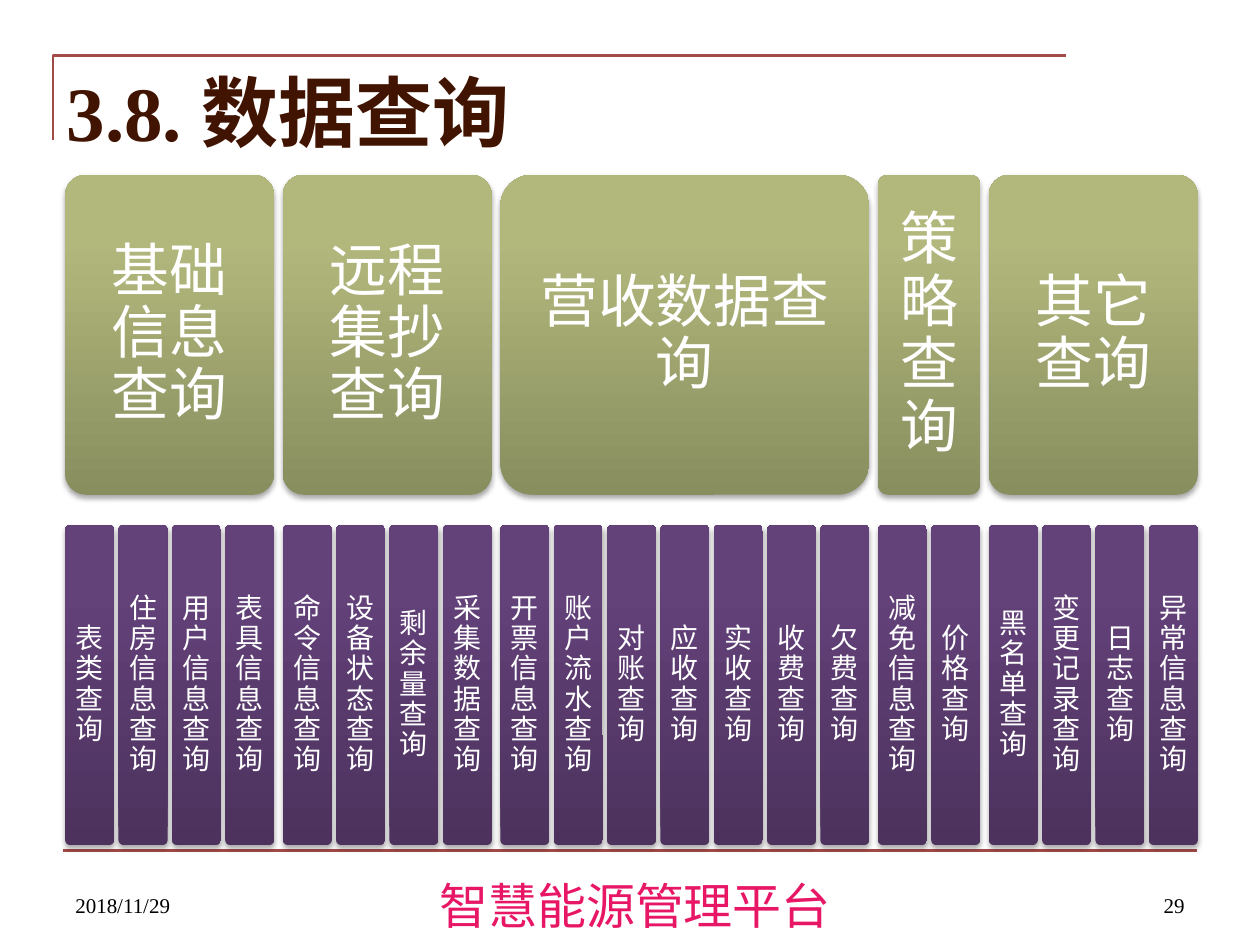
"""Build the data query slide on a grid of 100 columns by 75 rows."""
import dataclasses

import lxml.etree
import pptx
import pptx.dml.color
import pptx.enum.shapes
import pptx.enum.text
import pptx.oxml
import pptx.oxml.ns
import pptx.util

COLUMNS, ROWS = 100, 75
CELL = pptx.util.Inches(10) / COLUMNS
RULE = "A24A48"
GRID_LEFT, GRID_RIGHT = 5.17, 95.07
LEAF_WIDTH, TILE_HEIGHT = 3.9, 25.4
GROUP_TOP, LEAF_TOP = 13.87, 41.67

ALIGN = pptx.enum.text.PP_ALIGN
ANCHOR = pptx.enum.text.MSO_ANCHOR


@dataclasses.dataclass(frozen=True)
class Frame:
    """A rectangle in grid columns and rows."""
    left: float
    top: float
    width: float
    height: float


@dataclasses.dataclass(frozen=True)
class Look:
    """The gradient, text size and inset shared by a row of tiles."""
    stops: tuple[tuple[int, str], ...]
    size: float
    inset: float


@dataclasses.dataclass(frozen=True)
class Group:
    """A query category with its leaf queries."""
    title: str
    leaves: tuple[str, ...]


@dataclasses.dataclass(frozen=True)
class Label:
    """A free text box with one run."""
    frame: Frame
    text: str
    font: str
    size: float
    color: str
    align: ALIGN = ALIGN.LEFT
    anchor: ANCHOR = ANCHOR.TOP
    bold: bool = False


GREEN = Look(((0, "898E5F"), (80, "B2B87C"), (100, "B4BA7B")), 33, 1.4)
PURPLE = Look(((0, "4C325D"), (80, "634179"), (100, "64417A")), 16, 0.7)

GROUPS = (
    Group("基础信息查询", ("表类查询", "住房信息查询", "用户信息查询", "表具信息查询")),
    Group("远程集抄查询", ("命令信息查询", "设备状态查询", "剩余量查询", "采集数据查询")),
    Group("营收数据查询", ("开票信息查询", "账户流水查询", "对账查询", "应收查询",
                     "实收查询", "收费查询", "欠费查询")),
    Group("策略查询", ("减免信息查询", "价格查询")),
    Group("其它查询", ("黑名单查询", "变更记录查询", "日志查询", "异常信息查询")),
)

LABELS = (
    Label(Frame(32.4, 69, 36, 5.6), "智慧能源管理平台", "Noto Sans CJK SC", 28,
          "E81766", align=ALIGN.CENTER),
    Label(Frame(5, 68.3, 23.3, 5), "2018/11/29", "Times New Roman", 12,
          "000000", anchor=ANCHOR.BOTTOM),
    Label(Frame(71.7, 68.3, 23.3, 5), "29", "Times New Roman", 12,
          "000000", align=ALIGN.RIGHT, anchor=ANCHOR.BOTTOM),
    Label(Frame(4.3, 4.9, 90.8, 7.7), "3.8. 数据查询", "Times New Roman", 44,
          "411401", anchor=ANCHOR.MIDDLE, bold=True),
)


def cells(count: float) -> int:
    """Convert grid cells to a length."""
    return pptx.util.Emu(round(count * CELL))


def place(frame: Frame) -> tuple[int, ...]:
    """Convert a frame to left, top, width and height."""
    return tuple(cells(value) for value in dataclasses.astuple(frame))


def color(value: str) -> pptx.dml.color.RGBColor:
    """Turn a hex string into a colour."""
    return pptx.dml.color.RGBColor.from_string(value)


def drawing(tag: str, body: str) -> lxml.etree.ElementBase:
    """Parse a drawing element from its tag and inner markup."""
    space = pptx.oxml.ns.nsdecls("a")
    return pptx.oxml.parse_xml(f"<a:{tag} {space}>{body}</a:{tag}>")


def add_span(para, text: str, font: str, size: float, ink: str, bold: bool = False) -> None:
    """Add one formatted run to a paragraph."""
    span = para.add_run()
    span.text = text
    span.font.name = font
    span.font.size = pptx.util.Pt(size)
    span.font.bold = bold
    span.font.color.rgb = color(ink)


def add_label(page, label: Label) -> None:
    """Draw a free text box."""
    box = page.shapes.add_textbox(*place(label.frame))
    box.text_frame.word_wrap = True
    box.text_frame.vertical_anchor = label.anchor
    para = box.text_frame.paragraphs[0]
    para.alignment = label.align
    add_span(para, label.text, label.font, label.size, label.color, label.bold)


def add_tile(page, frame: Frame, text: str, look: Look) -> None:
    """Draw a rounded gradient tile with a soft shadow and centred text."""
    kind = pptx.enum.shapes.MSO_SHAPE.ROUNDED_RECTANGLE
    tile = page.shapes.add_shape(kind, *place(frame))
    tile.adjustments[0] = 0.1
    tile.line.fill.background()
    stops = "".join(f'<a:gs pos="{at * 1000}"><a:srgbClr val="{ink}"/></a:gs>'
                    for at, ink in look.stops)
    properties = tile._element.spPr
    properties.insert(2, drawing(
        "gradFill", f'<a:gsLst>{stops}</a:gsLst><a:lin ang="16200000" scaled="0"/>'))
    properties.append(drawing(
        "effectLst", '<a:outerShdw blurRad="40000" dist="23000" dir="5400000" '
        'rotWithShape="0"><a:srgbClr val="000000"><a:alpha val="35000"/>'
        '</a:srgbClr></a:outerShdw>'))
    body = tile.text_frame
    body.word_wrap = True
    body.vertical_anchor = ANCHOR.MIDDLE
    body.margin_left = body.margin_right = cells(look.inset)
    body.margin_top = body.margin_bottom = cells(look.inset)
    para = body.paragraphs[0]
    para.alignment = ALIGN.CENTER
    para.line_spacing = 0.9
    add_span(para, text, "Arial", look.size, "FFFFFF")


def add_groups(page) -> None:
    """Draw each category over its leaves, with double gaps between categories."""
    count = sum(len(group.leaves) for group in GROUPS)
    gaps = count - 1 + len(GROUPS) - 1
    gap = (GRID_RIGHT - GRID_LEFT - count * LEAF_WIDTH) / gaps
    pitch = LEAF_WIDTH + gap
    left = GRID_LEFT
    for group in GROUPS:
        width = len(group.leaves) * pitch - gap
        add_tile(page, Frame(left, GROUP_TOP, width, TILE_HEIGHT), group.title, GREEN)
        for index, leaf in enumerate(group.leaves):
            frame = Frame(left + index * pitch, LEAF_TOP, LEAF_WIDTH, TILE_HEIGHT)
            add_tile(page, frame, leaf, PURPLE)
        left += width + 2 * gap


def add_rules(page) -> None:
    """Draw the title corner and the footer line."""
    builder = page.shapes.build_freeform(cells(4.2), cells(11.1))
    builder.add_line_segments(
        [(cells(4.2), cells(4.4)), (cells(84.6), cells(4.4))], close=False)
    corner = builder.convert_to_shape()
    corner.fill.background()
    straight = pptx.enum.shapes.MSO_CONNECTOR.STRAIGHT
    footer = page.shapes.add_connector(
        straight, cells(5), cells(67.5), cells(95), cells(67.5))
    for rule in (corner, footer):
        rule.line.color.rgb = color(RULE)
        rule.line.width = pptx.util.Pt(1.5)
        rule._element.spPr.append(drawing("effectLst", ""))


def main() -> None:
    """Build and save the deck."""
    deck = pptx.Presentation()
    deck.slide_width, deck.slide_height = cells(COLUMNS), cells(ROWS)
    page = deck.slides.add_slide(deck.slide_layouts[6])
    add_rules(page)
    for label in LABELS:
        add_label(page, label)
    add_groups(page)
    deck.save("out.pptx")


if __name__ == "__main__":
    main()
